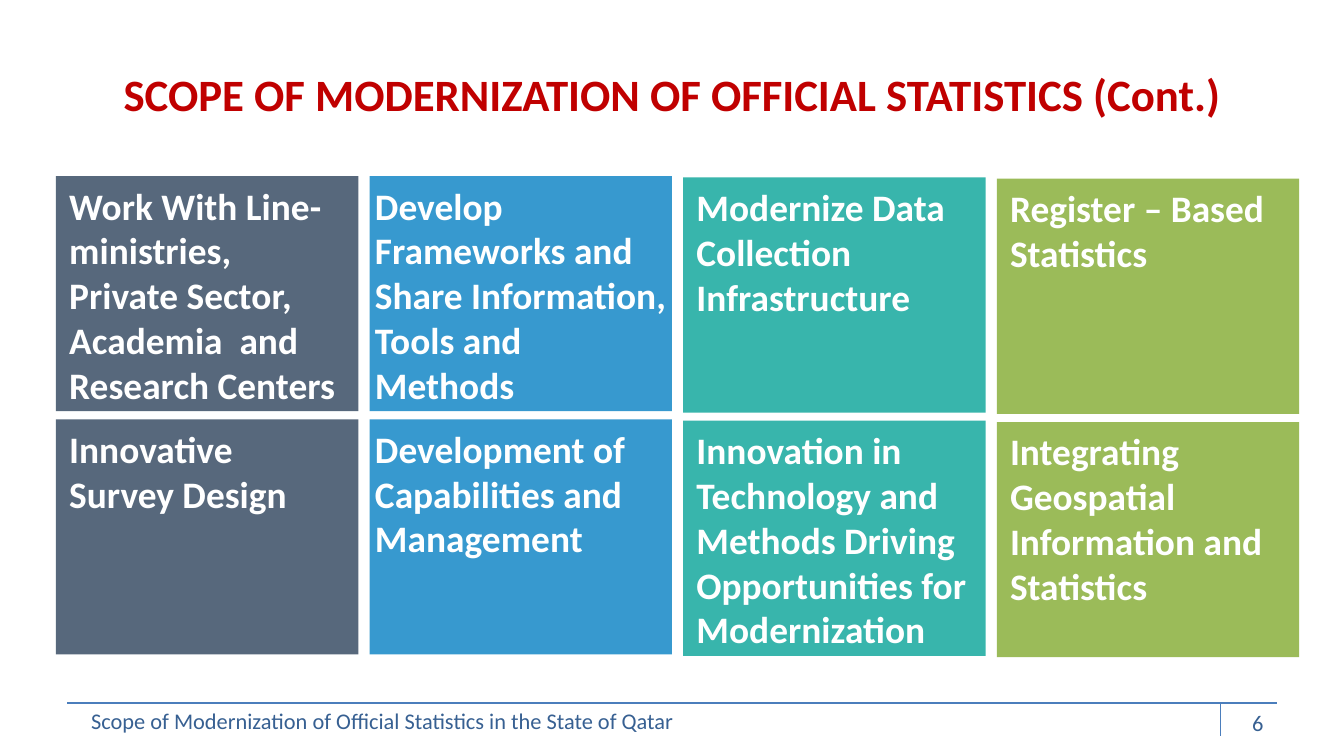
import pptx
import pptx.dml.color
import pptx.enum.shapes
import pptx.enum.text
import pptx.oxml
import pptx.oxml.ns
import pptx.util
from dataclasses import dataclass

Inches = pptx.util.Inches
Align = pptx.enum.text.PP_ALIGN
Anchor = pptx.enum.text.MSO_ANCHOR


@dataclass(frozen=True)
class Theme:
    font: str = "Calibri"
    title: str = "C00000"
    foot: str = "376092"
    rule: str = "4B7EBC"
    white: str = "FFFFFF"
    slate: str = "57687C"
    blue: str = "0680C3"
    teal: str = "07A398"
    green: str = "9BBB59"
    big: int = 24
    body: int = 20
    small: int = 12


THEME = Theme()

# Each column: fill, opacity in percent, top, side inset, upper and lower text
COLUMNS = [
    (THEME.slate, 100, 1.31, 0.1,
     "Work With Line-ministries, Private Sector, Academia  and Research Centers",
     "Innovative Survey Design"),
    (THEME.blue, 80, 1.31, 0.04,
     "Develop  Frameworks and Share Information, Tools and Methods",
     "Development of Capabilities and Management"),
    (THEME.teal, 80, 1.32, 0.1,
     "Modernize Data Collection Infrastructure",
     "Innovation in Technology and Methods Driving Opportunities for Modernization"),
    (THEME.green, 100, 1.33, 0.1,
     "Register – Based\nStatistics",
     "Integrating Geospatial Information and Statistics"),
]
LEFT, WIDTH, HEIGHT = 5 / 12, 2.25, 1.75
COL_STEP, ROW_STEP = 7 / 3, 1.81


def rgb(code):
    return pptx.dml.color.RGBColor.from_string(code)


def write(shape, text, size=THEME.body, color=THEME.white, bold=False,
          align=Align.LEFT, anchor=Anchor.TOP, side=0.1):
    """Fill a shape with text, one paragraph per line."""
    frame = shape.text_frame
    frame.word_wrap = True
    frame.vertical_anchor = anchor
    frame.margin_left = frame.margin_right = Inches(side)
    frame.margin_top = frame.margin_bottom = Inches(0.05)
    frame.text = text
    for para in frame.paragraphs:
        para.alignment = align
        for run in para.runs:
            font = run.font
            font.name, font.size = THEME.font, pptx.util.Pt(size)
            font.bold = bold
            font.color.rgb = rgb(color)


def label(slide, box, text, **style):
    write(slide.shapes.add_textbox(*map(Inches, box)), text, **style)


def tile(slide, box, text, fill, alpha, side):
    kind = pptx.enum.shapes.MSO_SHAPE.RECTANGLE
    shape = slide.shapes.add_shape(kind, *map(Inches, box))
    shape.shadow.inherit = False
    shape.line.fill.background()
    shape.fill.solid()
    shape.fill.fore_color.rgb = rgb(fill)
    if alpha < 100:
        tone = shape._element.spPr.find(".//" + pptx.oxml.ns.qn("a:srgbClr"))
        tone.append(pptx.oxml.parse_xml(
            f'<a:alpha {pptx.oxml.ns.nsdecls("a")} val="{alpha * 1000}"/>'))
    write(shape, text, bold=True, side=side)


def rule(slide, *ends):
    kind = pptx.enum.shapes.MSO_CONNECTOR.STRAIGHT
    line = slide.shapes.add_connector(kind, *map(Inches, ends))
    line.line.color.rgb = rgb(THEME.rule)
    line.line.width = pptx.util.Pt(0.75)
    line._element.spPr.append(
        pptx.oxml.parse_xml(f'<a:effectLst {pptx.oxml.ns.nsdecls("a")}/>'))


def main():
    deck = pptx.Presentation()
    # Widescreen, 16 to 9
    deck.slide_width = Inches(10)
    deck.slide_height = Inches(10 * 9 / 16)
    slide = deck.slides.add_slide(deck.slide_layouts[6])

    # Footer
    label(slide, (0.58, 5.21, 5.5, 0.5),
          "Scope of Modernization of Official Statistics in the State of Qatar",
          size=THEME.small, color=THEME.foot)
    rule(slide, 0.5, 5.23, 9.5, 5.23)
    rule(slide, 9.08, 5.23, 9.08, 5.48)
    label(slide, (7.17, 5.23, 2.33, 0.3), "6", size=THEME.small,
          color=THEME.foot, align=Align.RIGHT)

    # Tiles: four columns of two
    for col, (fill, alpha, top, side, *texts) in enumerate(COLUMNS):
        for row, text in enumerate(texts):
            box = (LEFT + col * COL_STEP, top + row * ROW_STEP, WIDTH, HEIGHT)
            tile(slide, box, text, fill, alpha, side)

    # Title
    label(slide, (0.5, 0.23, 9, 0.94),
          "SCOPE OF MODERNIZATION OF OFFICIAL STATISTICS (Cont.)",
          size=THEME.big, color=THEME.title, bold=True,
          align=Align.CENTER, anchor=Anchor.MIDDLE)

    deck.save("out.pptx")


if __name__ == "__main__":
    main()
